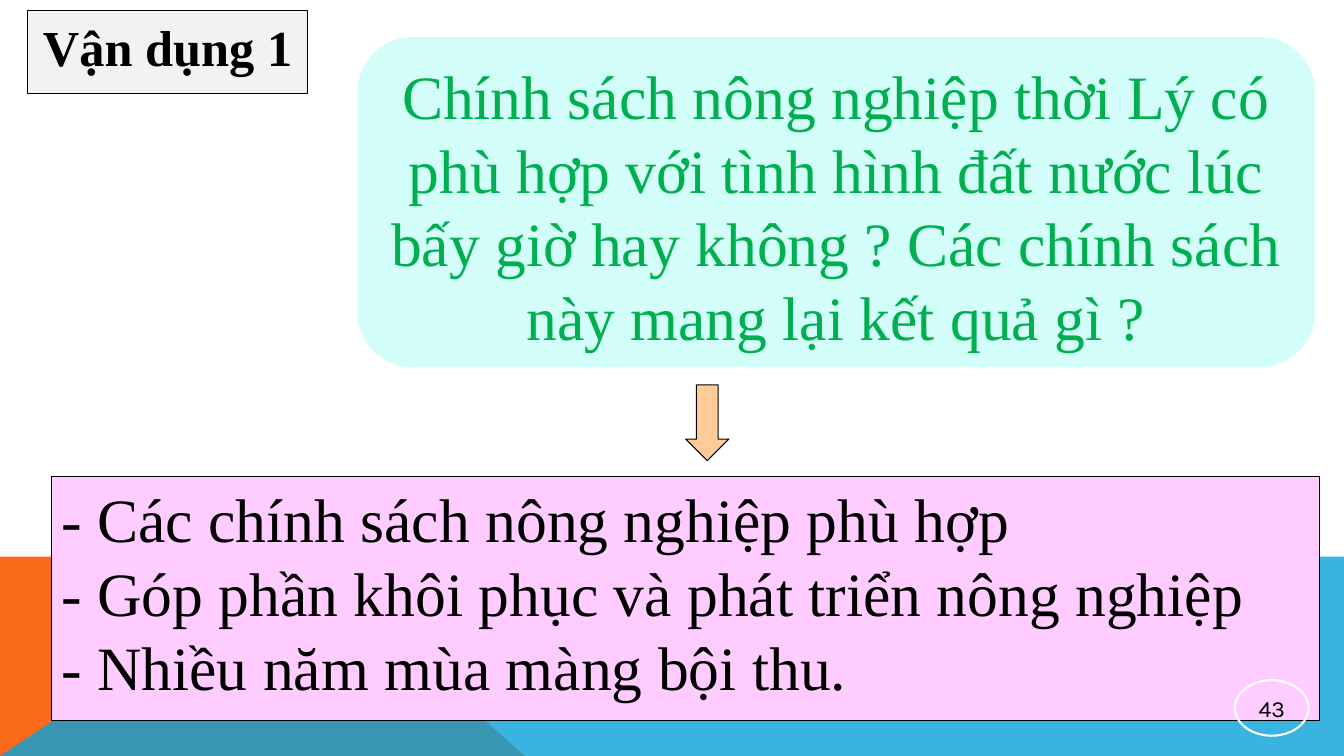
from dataclasses import dataclass

from lxml import etree
from pptx import Presentation
from pptx import util as u
from pptx.dml.color import RGBColor
from pptx.enum import shapes, text
from pptx.oxml import ns


@dataclass(frozen=True)
class Theme:
    orange: str = "F96A1B"
    blue: str = "08A1D9"
    mint: str = "D3FDF8"
    pink: str = "FFCCFF"
    peach: str = "FFCC99"
    grey: str = "F2F2F2"
    green: str = "00B050"
    black: str = "000000"
    white: str = "FFFFFF"
    serif: str = "Times New Roman"
    sans: str = "Karla"
    body: float = 44
    heading: float = 36
    number: float = 16.5
    thin: float = 0.75
    ring: float = 1.5


THEME = Theme()
WIDTH, HEIGHT = 33.87, 19.05
KIND = shapes.MSO_SHAPE
ALIGN = text.PP_ALIGN


def paint(shape, fill, line=None, weight=THEME.thin):
    shape.shadow.inherit = False
    if fill:
        shape.fill.solid()
        shape.fill.fore_color.rgb = RGBColor.from_string(fill)
    else:
        shape.fill.background()
    if line:
        shape.line.color.rgb = RGBColor.from_string(line)
        shape.line.width = u.Pt(weight)
    else:
        shape.line.fill.background()


def panel(slide, kind, box, fill, line=THEME.black, weight=THEME.thin):
    shape = slide.shapes.add_shape(kind, *(u.Cm(length) for length in box))
    paint(shape, fill, line, weight)
    return shape


def write(shape, lines, size, color=THEME.black, font=THEME.serif,
          align=ALIGN.CENTER, bold=False, anchor=text.MSO_ANCHOR.TOP):
    frame = shape.text_frame
    frame.word_wrap = True
    frame.vertical_anchor = anchor
    for index, words in enumerate(lines):
        paragraph = frame.add_paragraph() if index else frame.paragraphs[0]
        paragraph.alignment = align
        run = paragraph.add_run()
        run.text = words
        run.font.name = font
        run.font.size = u.Pt(size)
        run.font.bold = bold
        run.font.color.rgb = RGBColor.from_string(color)


# Coloured band along the foot of the slide
def foot_band(slide, box):
    left, top, width, height = box
    bottom = top + height

    def wedge(corners, fill):
        points = [(u.Cm(x), u.Cm(y)) for x, y in corners]
        builder = slide.shapes.build_freeform(*points[0])
        builder.add_line_segments(points[1:], close=True)
        shape = builder.convert_to_shape()
        paint(shape, fill)
        return shape

    fold = left + 7.56
    wedge([(left, bottom), (left, top), (fold, top), (left + 13.23, bottom)],
          THEME.orange)
    sweep = wedge([(left, bottom), (fold, top), (left + width, top),
                   (left + width, bottom)], THEME.blue)
    tint = sweep.fill._xPr.find(".//" + ns.qn("a:srgbClr"))
    etree.SubElement(tint, ns.qn("a:alpha"), val="80000")


# Question with the arrow leading down to its answer
def question(slide, box):
    left, top, width, height = box
    bubble = panel(slide, KIND.ROUNDED_RECTANGLE, box, THEME.mint, THEME.white)
    write(bubble, ["Chính sách nông nghiệp thời Lý có phù hợp với tình hình "
                   "đất nước lúc bấy giờ hay không ? Các chính sách này mang "
                   "lại kết quả gì ?"], THEME.body, THEME.green)
    panel(slide, KIND.DOWN_ARROW,
          (left + 8.28, top + height + 0.43, 1.09, 1.91), THEME.peach)


# Answer points
def answer(slide, box):
    points = panel(slide, KIND.RECTANGLE, box, THEME.pink)
    write(points, ["- Các chính sách nông nghiệp phù hợp",
                   "- Góp phần khôi phục và phát triển nông nghiệp",
                   "- Nhiều năm mùa màng bội thu."],
          THEME.body, align=ALIGN.JUSTIFY)


# Heading label
def heading(slide, box):
    label = panel(slide, KIND.RECTANGLE, box, THEME.grey)
    write(label, ["Vận dụng 1"], THEME.heading, bold=True)


# Page number in a ring
def page_number(slide, box):
    ring = panel(slide, KIND.OVAL, box, None, THEME.white, THEME.ring)
    frame = ring.text_frame
    frame.margin_left = frame.margin_right = u.Cm(0.03)
    frame.margin_top = frame.margin_bottom = u.Cm(0.03)
    write(ring, ["43"], THEME.number, font=THEME.sans,
          anchor=text.MSO_ANCHOR.MIDDLE)


def main():
    deck = Presentation()
    deck.slide_width, deck.slide_height = u.Cm(WIDTH), u.Cm(HEIGHT)
    slide = deck.slides.add_slide(deck.slide_layouts[6])
    foot_band(slide, (0, 14.03, WIDTH, HEIGHT - 14.03))
    question(slide, (9, 0.92, 24.15, 8.35))
    answer(slide, (1.3, 12, 31.95, 6.15))
    heading(slide, (0.7, 0.27, 7.05, 2.09))
    page_number(slide, (31.12, 17.14, 1.86, 1.4))
    deck.save("out.pptx")


if __name__ == "__main__":
    main()
